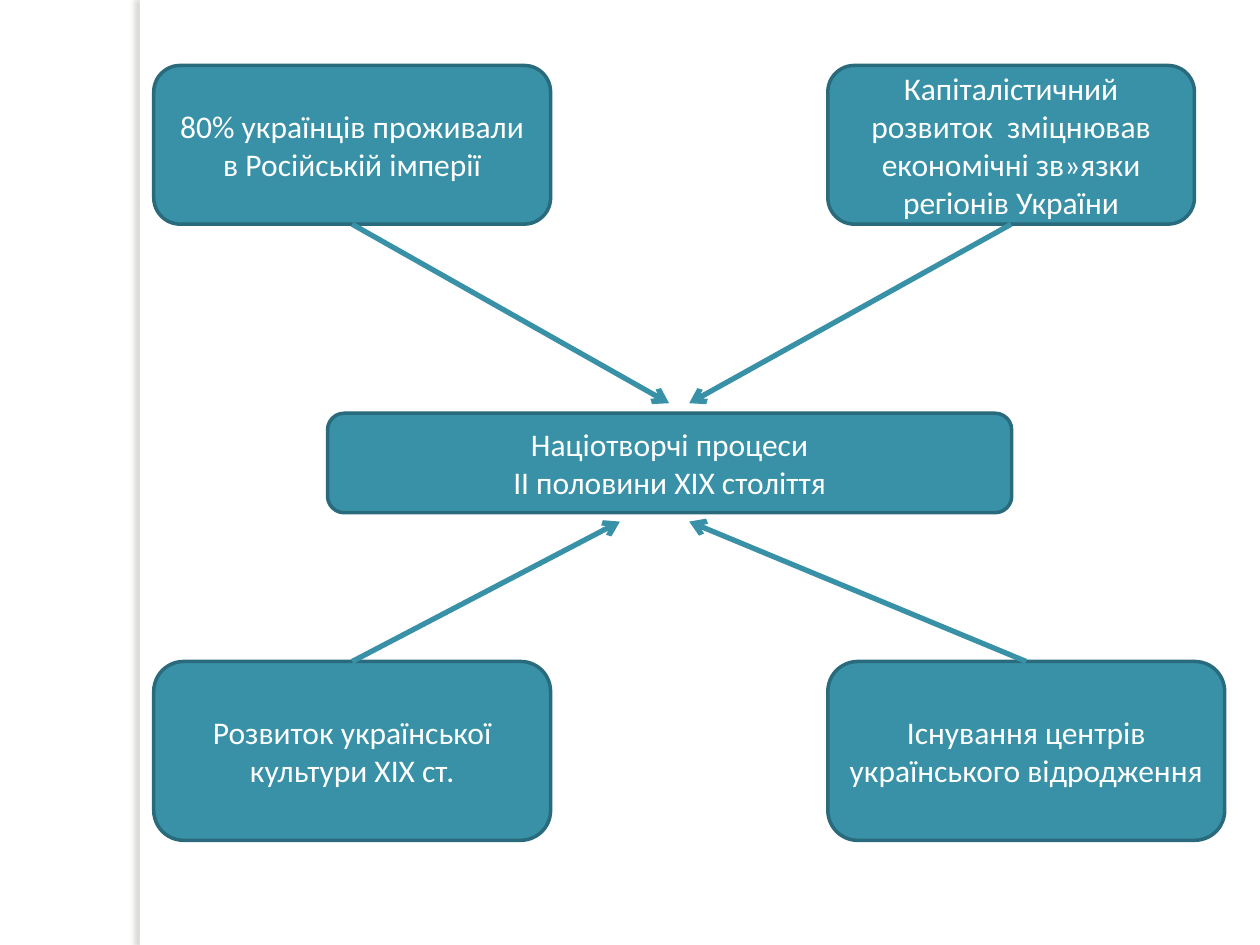
from dataclasses import dataclass

import pptx
import pptx.dml.color
import pptx.enum.shapes
import pptx.enum.text
import pptx.oxml
import pptx.oxml.ns
import pptx.util

SLIDE_WIDTH = pptx.util.Inches(10)
SLIDE_HEIGHT = pptx.util.Inches(7.5)
FILL, OUTLINE, WHITE = "3891A7", "296B7C", "FFFFFF"

# Shares of the slide, in percent
LEFT, RIGHT = 12.2, 65.7
TOP, BOTTOM = 6.93, 70
TOP_HEIGHT, BOTTOM_HEIGHT = 16.8, 18.93
WIDE, NARROW = 31.5, 29.1
TIP_ABOVE, TIP_BELOW = 42.67, 55.2
TOP_SIDE, BOTTOM_SIDE = 0, 2


@dataclass
class Box:
    left: float
    top: float
    width: float
    height: float
    lines: tuple[str, ...]


@dataclass
class Factor:
    """A cause box and the arrow leading from it to the central box."""
    box: Box
    side: int
    tip: tuple[float, float]


CENTRE = Box(26, 43.73, 54.3, 10.53, ("Націотворчі процеси", "ІІ половини ХІХ століття"))
FACTORS = (
    Factor(Box(LEFT, TOP, WIDE, TOP_HEIGHT,
               ("80% українців проживали в Російській імперії",)),
           BOTTOM_SIDE, (53.1, TIP_ABOVE)),
    Factor(Box(RIGHT, TOP, NARROW, TOP_HEIGHT,
               ("Капіталістичний розвиток  зміцнював економічні зв»язки регіонів України",)),
           BOTTOM_SIDE, (54.7, TIP_ABOVE)),
    Factor(Box(LEFT, BOTTOM, WIDE, BOTTOM_HEIGHT,
               ("Розвиток української культури ХІХ ст.",)),
           TOP_SIDE, (49.2, TIP_BELOW)),
    Factor(Box(RIGHT, BOTTOM, WIDE, BOTTOM_HEIGHT,
               ("Існування центрів українського відродження",)),
           TOP_SIDE, (54.7, TIP_BELOW)),
)


def across(share: float) -> int:
    return round(SLIDE_WIDTH * share / 100)


def down(share: float) -> int:
    return round(SLIDE_HEIGHT * share / 100)


def paint(target, colour: str) -> None:
    """Give a fill one solid colour."""
    target.solid()
    target.fore_color.rgb = pptx.dml.color.RGBColor.from_string(colour)


def draw_strip(page) -> None:
    """Draw the white strip that casts a soft shadow to its left."""
    strip = page.shapes.add_shape(pptx.enum.shapes.MSO_SHAPE.RECTANGLE,
                                  across(11.1), 0, across(0.8), SLIDE_HEIGHT)
    paint(strip.fill, WHITE)
    strip.line.fill.background()
    strip.shadow.inherit = False
    effects = strip._element.spPr.find(pptx.oxml.ns.qn("a:effectLst"))
    effects.append(pptx.oxml.parse_xml(
        f'<a:outerShdw {pptx.oxml.ns.nsdecls("a")} blurRad="{pptx.util.Pt(3)}" '
        f'dist="{pptx.util.Pt(3)}" dir="10800000" algn="tl" rotWithShape="0">'
        '<a:srgbClr val="736F63"><a:alpha val="25000"/></a:srgbClr></a:outerShdw>'))


def draw_box(page, box: Box):
    shape = page.shapes.add_shape(
        pptx.enum.shapes.MSO_SHAPE.ROUNDED_RECTANGLE,
        across(box.left), down(box.top), across(box.width), down(box.height))
    shape.shadow.inherit = False
    paint(shape.fill, FILL)
    paint(shape.line.fill, OUTLINE)
    shape.line.width = pptx.util.Pt(2)
    frame = shape.text_frame
    frame.word_wrap = True
    frame.vertical_anchor = pptx.enum.text.MSO_ANCHOR.MIDDLE
    frame.text = "\n".join(box.lines)
    for para in frame.paragraphs:
        para.alignment = pptx.enum.text.PP_ALIGN.CENTER
        para.font.name = "Calibri"
        para.font.size = pptx.util.Pt(18)
        paint(para.font.fill, WHITE)
    return shape


def draw_arrow(page, shape, factor: Factor) -> None:
    tip_x, tip_y = across(factor.tip[0]), down(factor.tip[1])
    arrow = page.shapes.add_connector(pptx.enum.shapes.MSO_CONNECTOR.STRAIGHT,
                                      shape.left, shape.top, tip_x, tip_y)
    arrow.begin_connect(shape, factor.side)
    paint(arrow.line.fill, FILL)
    arrow.line.width = pptx.util.Pt(3)
    namespace = pptx.oxml.ns.nsdecls("a")
    arrow.line._get_or_add_ln().append(
        pptx.oxml.parse_xml(f'<a:tailEnd {namespace} type="arrow"/>'))
    arrow._element.spPr.append(pptx.oxml.parse_xml(f"<a:effectLst {namespace}/>"))


def main() -> None:
    deck = pptx.Presentation()
    deck.slide_width, deck.slide_height = SLIDE_WIDTH, SLIDE_HEIGHT
    page = deck.slides.add_slide(deck.slide_layouts[6])
    draw_strip(page)
    draw_box(page, CENTRE)
    for factor in FACTORS:
        draw_arrow(page, draw_box(page, factor.box), factor)
    deck.save("out.pptx")


if __name__ == "__main__":
    main()
